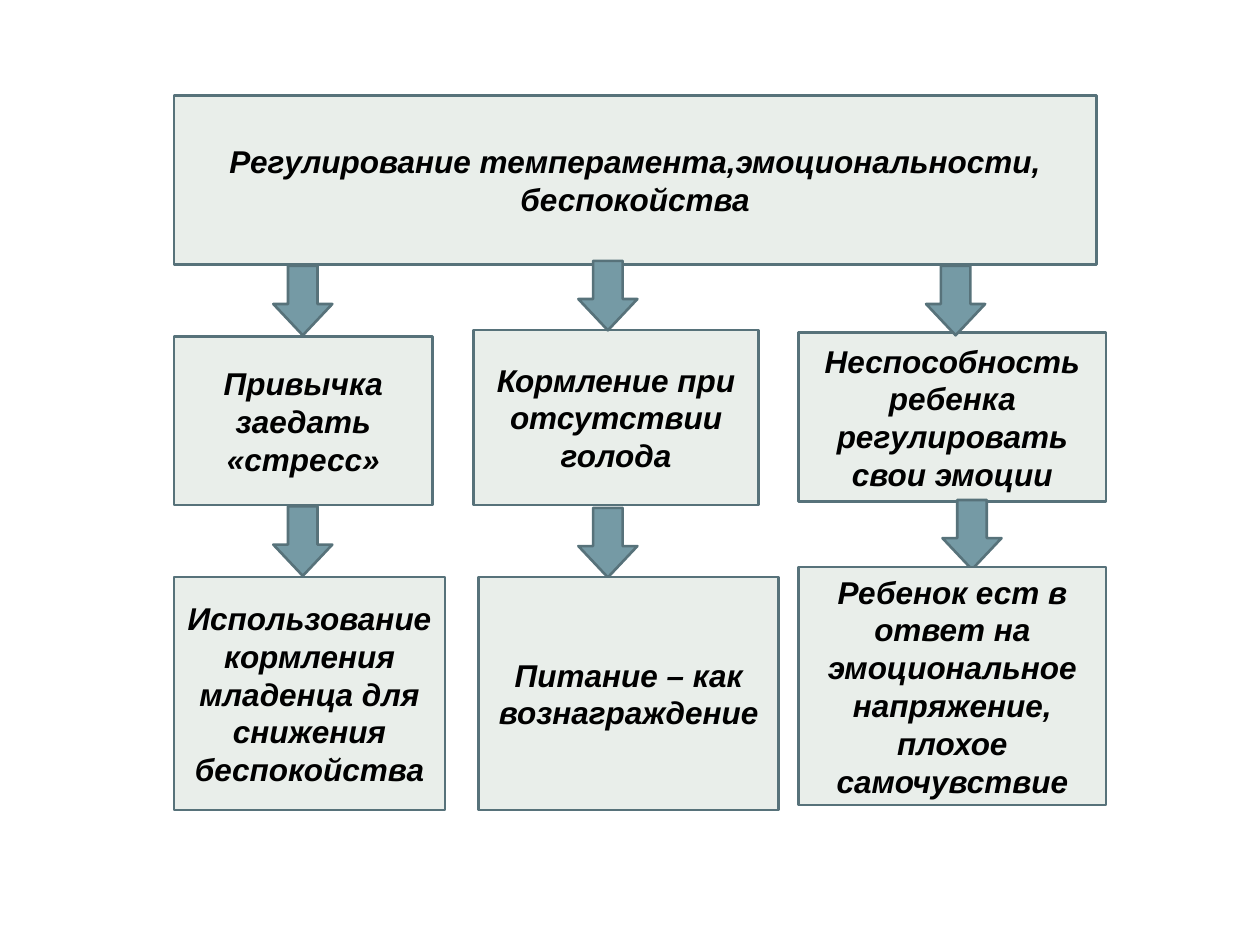
from pptx import Presentation
from pptx.dml.color import RGBColor as Rgb
from pptx.enum.shapes import MSO_SHAPE as Kind
from pptx.enum.text import MSO_ANCHOR as Anchor, PP_ALIGN as Align
from pptx.util import Cm, Pt

HUES = {"box": "E9EEEA", "arrow": "759AA5", "edge": "57727A", "text": "000000"}

HEAD = ("Регулирование темперамента,эмоциональности, беспокойства",
        3.51, 1.93, 18.59, 3.4)
CAUSES = [
    ("Привычка заедать «стресс»", 3.51, 6.78, 5.21, 3.4),
    ("Кормление при отсутствии голода", 9.55, 6.65, 5.74, 3.53),
    ("Неспособность ребенка регулировать свои эмоции", 16.1, 6.71, 6.2, 3.4),
]
ARROWS = [
    (5.51, 5.36), (11.66, 5.26), (18.67, 5.36),
    (5.51, 10.21), (11.66, 10.24), (19, 10.08),
]
RESULTS = [
    ("Использование кормления младенца для снижения беспокойства",
     3.51, 11.63, 5.46, 4.7),
    ("Питание – как вознаграждение", 9.65, 11.63, 6.05, 4.7),
    ("Ребенок ест в ответ на эмоциональное напряжение, плохое самочувствие",
     16.1, 11.43, 6.2, 4.8),
]


class Chart:
    font = "Arial"
    size = Pt(18)
    edge = Pt(1.5)

    def __init__(self, slide):
        self.slide = slide

    def shape(self, kind, hue, x, y, w, h):
        shape = self.slide.shapes.add_shape(kind, Cm(x), Cm(y), Cm(w), Cm(h))
        shape.shadow.inherit = False
        shape.fill.solid()
        shape.fill.fore_color.rgb = Rgb.from_string(HUES[hue])
        shape.line.color.rgb = Rgb.from_string(HUES["edge"])
        shape.line.width = self.edge
        return shape

    def box(self, text, x, y, w, h):
        frame = self.shape(Kind.RECTANGLE, "box", x, y, w, h).text_frame
        frame.word_wrap = True
        frame.vertical_anchor = Anchor.MIDDLE
        para = frame.paragraphs[0]
        para.alignment = Align.CENTER
        run = para.add_run()
        run.text = text
        font = run.font
        font.name, font.size = self.font, self.size
        font.bold = font.italic = True
        font.color.rgb = Rgb.from_string(HUES["text"])

    def arrow(self, x, y):
        arrow = self.shape(Kind.DOWN_ARROW, "arrow", x, y, 1.19, 1.4)
        arrow.adjustments[0] = 0.5
        arrow.adjustments[1] = 0.53


def main():
    deck = Presentation()
    deck.slide_width, deck.slide_height = Cm(25.4), Cm(19.05)
    chart = Chart(deck.slides.add_slide(deck.slide_layouts[6]))
    for box in [HEAD] + CAUSES:
        chart.box(*box)
    for spot in ARROWS:
        chart.arrow(*spot)
    for box in RESULTS:
        chart.box(*box)
    deck.save("out.pptx")


if __name__ == "__main__":
    main()
